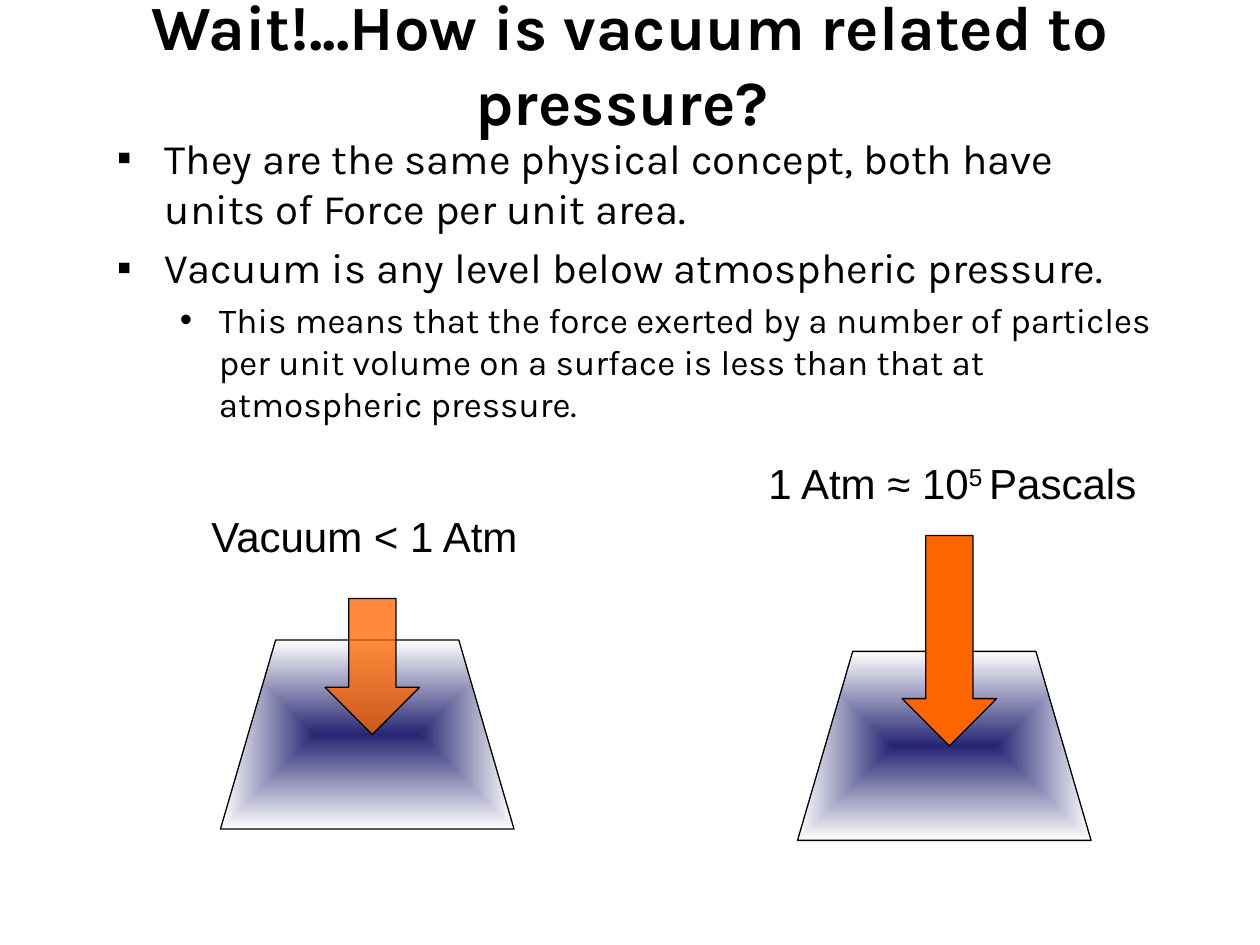
from lxml import etree
from pptx import Presentation
from pptx.dml.color import RGBColor
from pptx.enum import shapes, text
from pptx.oxml import ns
from pptx.util import Inches, Pt

BLACK, WHITE, NAVY, ORANGE = "000000", "FFFFFF", "262673", "FF6600"

TITLE = "Wait!...How is vacuum related to pressure? "
POINTS = [
    (0, "They are the same physical concept, both have units of Force per unit area."),
    (0, "Vacuum is any level below atmospheric pressure."),
    (1, "This means that the force exerted by a number of particles per unit volume "
        "on a surface is less than that at atmospheric pressure."),
]
LEVELS = [
    {"bullet": "▪", "margin": 0.38, "hang": 0.38, "size": 24},
    {"bullet": "•", "margin": 0.81, "hang": 0.31, "size": 20},
]
DIAGRAMS = [
    {"plate": (6.33, 5.17), "arrow_height": 1.67, "opacity": 100,
     "label_at": (6, 3.58, 3.21, 0.5),
     "label": [("1 Atm ≈ 10", 0), ("5 ", 30), ("Pascals", 0)]},
    {"plate": (1.75, 5.08), "arrow_height": 1.08, "opacity": 76,
     "label_at": (1.58, 4, 2.66, 0.5),
     "label": [("Vacuum < 1 Atm", 0)]},
]
PLATE_WIDTH, PLATE_HEIGHT, ARROW_WIDTH = 2.33, 1.5, 0.75


def rgb(value):
    return RGBColor.from_string(value)


def add(parent, tag, **attributes):
    return etree.SubElement(parent, ns.qn(tag), attributes)


def style(font, color=BLACK, **values):
    for name, value in values.items():
        setattr(font, name, value)
    font.color.rgb = rgb(color)


def add_text(at, wrap=True, anchor=text.MSO_ANCHOR.TOP):
    box = slide.shapes.add_textbox(*map(Inches, at))
    box.text_frame.word_wrap = wrap
    box.text_frame.vertical_anchor = anchor
    return box


def add_outlined(kind, at, color):
    shape = slide.shapes.add_shape(kind, *map(Inches, at))
    shape.shadow.inherit = False
    shape.fill.solid()
    shape.fill.fore_color.rgb = rgb(color)
    shape.line.color.rgb = rgb(BLACK)
    shape.line.width = Pt(0.75)
    return shape


def fill_from_center(shape, inner, outer):
    solid = shape._element.spPr.find(ns.qn("a:solidFill"))
    gradient = etree.Element(ns.qn("a:gradFill"), rotWithShape="1")
    stops = add(gradient, "a:gsLst")
    for position, color in (("0", inner), ("100000", outer)):
        add(add(stops, "a:gs", pos=position), "a:srgbClr", val=color)
    path = add(gradient, "a:path", path="shape")
    add(path, "a:fillToRect", **dict.fromkeys("ltrb", "50000"))
    solid.getparent().replace(solid, gradient)


def add_title():
    title = add_text((0.75, 0, 8.5, 1), anchor=text.MSO_ANCHOR.MIDDLE)
    title.fill.solid()
    title.fill.fore_color.rgb = rgb(WHITE)
    paragraph = title.text_frame.paragraphs[0]
    paragraph.alignment = text.PP_ALIGN.CENTER
    run = paragraph.add_run()
    run.text = TITLE
    style(run.font, name="Karla", size=Pt(36), bold=True)


def add_points():
    frame = add_text((0.83, 1, 8.5, 2.75)).text_frame
    for index, (level, words) in enumerate(POINTS):
        look = LEVELS[level]
        paragraph = frame.add_paragraph() if index else frame.paragraphs[0]
        paragraph.level = level
        properties = paragraph._p.get_or_add_pPr()
        properties.set("marL", str(Inches(look["margin"])))
        properties.set("indent", str(-Inches(look["hang"])))
        paragraph.space_before = Pt(look["size"] * 0.2 if index else 0)
        add(properties, "a:buFont", typeface="Arial")
        add(properties, "a:buChar", char=look["bullet"])
        run = paragraph.add_run()
        run.text = words
        style(run.font, name="Karla", size=Pt(look["size"]))


def add_diagram(diagram):
    left, top = diagram["plate"]
    plate = add_outlined(shapes.MSO_SHAPE.TRAPEZOID, (left, top, PLATE_WIDTH, PLATE_HEIGHT), WHITE)
    plate.adjustments[0] = 0.292
    fill_from_center(plate, NAVY, WHITE)

    height = diagram["arrow_height"]
    arrow_left = left + PLATE_WIDTH / 2 + 0.04 - ARROW_WIDTH / 2
    arrow_top = top + PLATE_HEIGHT / 2 - height
    arrow = add_outlined(shapes.MSO_SHAPE.DOWN_ARROW,
                         (arrow_left, arrow_top, ARROW_WIDTH, height), ORANGE)
    if diagram["opacity"] < 100:
        color = arrow._element.spPr.find(ns.qn("a:solidFill"))[0]
        add(color, "a:alpha", val=str(diagram["opacity"] * 1000))

    label = add_text(diagram["label_at"], wrap=False).text_frame
    label.auto_size = text.MSO_AUTO_SIZE.SHAPE_TO_FIT_TEXT
    for words, baseline in diagram["label"]:
        run = label.paragraphs[0].add_run()
        run.text = words
        style(run.font, name="Arial", size=Pt(24))
        if baseline:
            run._r.get_or_add_rPr().set("baseline", str(baseline * 1000))


deck = Presentation()
deck.slide_width, deck.slide_height = Inches(10), Inches(7.5)
slide = deck.slides.add_slide(deck.slide_layouts[6])
add_title()
add_points()
for diagram in DIAGRAMS:
    add_diagram(diagram)
deck.save("out.pptx")
